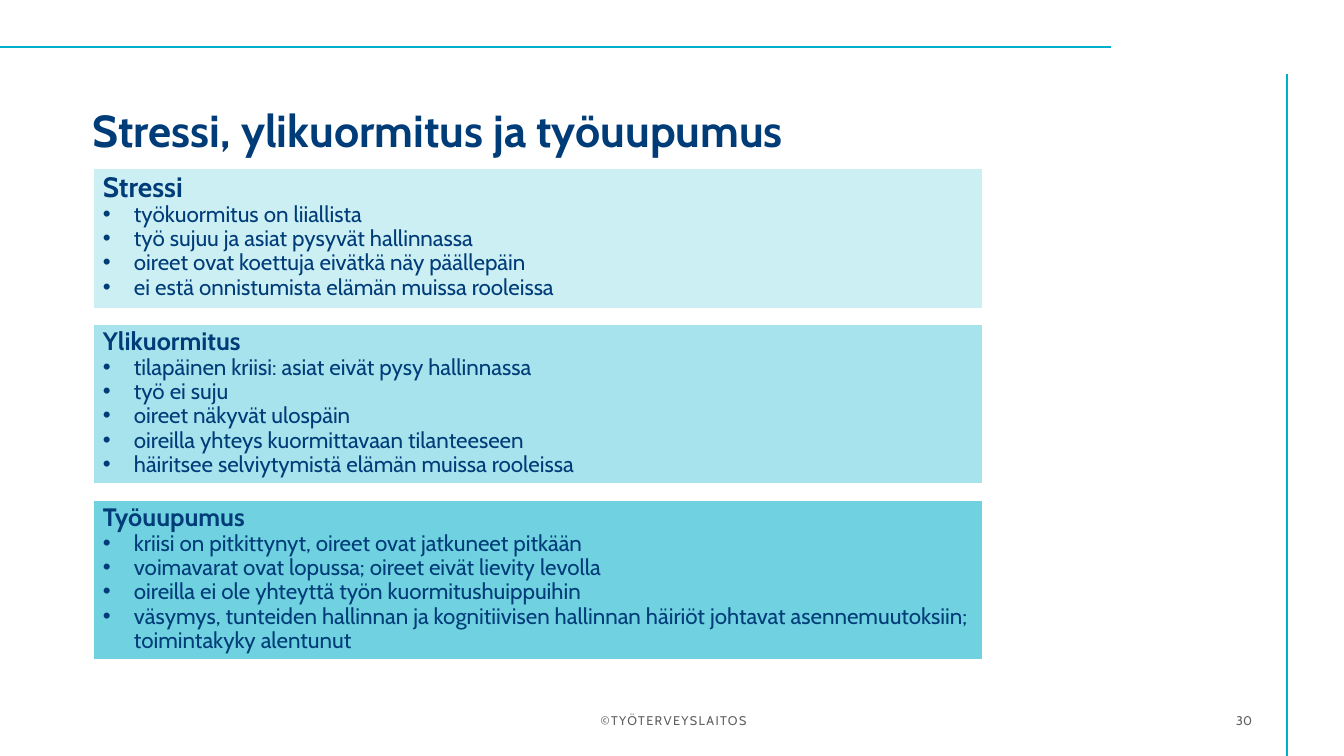
from lxml import etree
from pptx import Presentation
from pptx.dml.color import RGBColor
from pptx.enum.shapes import MSO_CONNECTOR, MSO_SHAPE
from pptx.enum.text import MSO_ANCHOR, MSO_AUTO_SIZE, PP_ALIGN
from pptx.oxml.ns import qn
from pptx.util import Pt

# Content
TITLE = "Stressi, ylikuormitus ja työuupumus"
STAGES = [
    {"heading": "Stressi", "size": 20, "fill": "light", "box": (93, 168, 890, 142),
     "points": ["työkuormitus on liiallista",
                "työ sujuu ja asiat pysyvät hallinnassa",
                "oireet ovat koettuja eivätkä näy päällepäin",
                "ei estä onnistumista elämän muissa rooleissa"]},
    {"heading": "Ylikuormitus", "size": 18, "fill": "medium", "box": (93, 324, 891, 160),
     "points": ["tilapäinen kriisi: asiat eivät pysy hallinnassa",
                "työ ei suju",
                "oireet näkyvät ulospäin",
                "oireilla yhteys kuormittavaan tilanteeseen",
                "häiritsee selviytymistä elämän muissa rooleissa"]},
    {"heading": "Työuupumus", "size": 18, "fill": "strong", "box": (93, 500, 890, 160),
     "points": ["kriisi on pitkittynyt, oireet ovat jatkuneet pitkään",
                "voimavarat ovat lopussa; oireet eivät lievity levolla",
                "oireilla ei ole yhteyttä työn kuormitushuippuihin",
                "väsymys, tunteiden hallinnan ja kognitiivisen hallinnan häiriöt "
                "johtavat asennemuutoksiin; toimintakyky alentunut"]},
]
FOOTERS = [
    {"text": "30", "box": (1128, 701, 124, 40), "align": PP_ALIGN.RIGHT, "inset": 0, "tracking": 0},
    {"text": "©TYÖTERVEYSLAITOS", "box": (255, 701, 837, 40), "align": PP_ALIGN.CENTER,
     "inset": 10, "tracking": 1},
]
RULES = [(0, 47, 1111, 47), (1287, 756, 1287, 74)]

COLORS = {"navy": "003C78", "gray": "606060", "teal": "00B0CA", "white": "FFFFFF",
          "light": "CCEFF4", "medium": "A7E3EC", "strong": "70D2E0"}
FONT = "Cabin"
PX = 914400 / 100.8
INDENT = 31


def px(*values):
    return [round(value * PX) for value in values]


def color(name):
    return RGBColor.from_string(COLORS[name])


def set_frame(frame, anchor, horizontal=0, vertical=0):
    frame.word_wrap = True
    frame.auto_size = MSO_AUTO_SIZE.NONE
    frame.vertical_anchor = anchor
    frame.margin_left = frame.margin_right = px(horizontal)[0]
    frame.margin_top = frame.margin_bottom = px(vertical)[0]


def write(frame, text, size=16, bold=False, ink="navy", align=PP_ALIGN.LEFT,
          spacing=1.0, bullet=False, tracking=0):
    first = frame.paragraphs[0]
    paragraph = frame.add_paragraph() if first.runs else first
    if bullet:
        properties = paragraph._p.get_or_add_pPr()
        indent = px(INDENT)[0]
        properties.set("marL", str(indent))
        properties.set("indent", str(-indent))
        etree.SubElement(properties, qn("a:buFont")).set("typeface", "Arial")
        etree.SubElement(properties, qn("a:buChar")).set("char", "•")
    paragraph.alignment = align
    paragraph.line_spacing = spacing
    run = paragraph.add_run()
    run.text = text
    run.font.name = FONT
    run.font.size = Pt(size)
    run.font.bold = bold
    run.font.color.rgb = color(ink)
    if tracking:
        run.font._element.set("spc", str(tracking * 100))


presentation = Presentation()
presentation.slide_width, presentation.slide_height = px(1344, 756)
slide = presentation.slides.add_slide(presentation.slide_layouts[5])

# Frame lines
for ends in RULES:
    rule = slide.shapes.add_connector(MSO_CONNECTOR.STRAIGHT, *px(*ends))
    rule.line.color.rgb = color("teal")
    rule.line.width = Pt(1.85)
    etree.SubElement(rule._element.spPr, qn("a:effectLst"))

# Title
title = slide.shapes.title
title.left, title.top, title.width, title.height = px(93, 72, 1135, 85)
set_frame(title.text_frame, MSO_ANCHOR.BOTTOM)
write(title.text_frame, TITLE, size=32, bold=True, spacing=0.85)

# Stage boxes
for stage in STAGES:
    shape = slide.shapes.add_shape(MSO_SHAPE.RECTANGLE, *px(*stage["box"]))
    shape.shadow.inherit = False
    shape.fill.solid()
    shape.fill.fore_color.rgb = color(stage["fill"])
    shape.line.color.rgb = color("white")
    shape.line.width = Pt(2)
    set_frame(shape.text_frame, MSO_ANCHOR.TOP, horizontal=10, vertical=5)
    write(shape.text_frame, stage["heading"], size=stage["size"], bold=True, spacing=0.9)
    for point in stage["points"]:
        write(shape.text_frame, point, spacing=0.9, bullet=True)

# Page number and footer
for footer in FOOTERS:
    frame = slide.shapes.add_textbox(*px(*footer["box"])).text_frame
    set_frame(frame, MSO_ANCHOR.MIDDLE, horizontal=footer["inset"])
    write(frame, footer["text"], size=9, ink="gray", align=footer["align"],
          tracking=footer["tracking"])

presentation.save("out.pptx")
